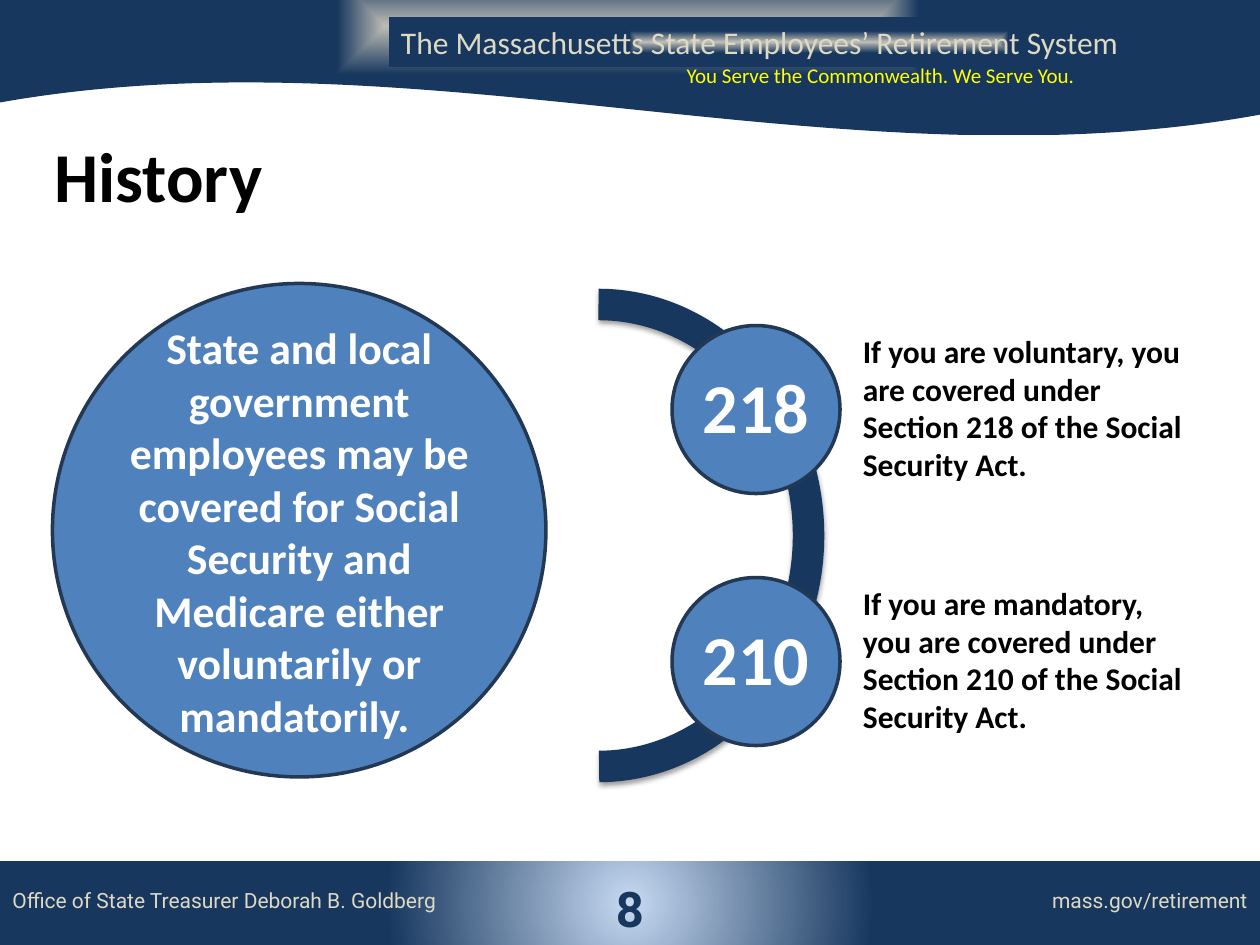
from dataclasses import dataclass

from pptx import Presentation
from pptx.dml.color import RGBColor
from pptx.enum.shapes import MSO_SHAPE
from pptx.enum.text import MSO_ANCHOR, MSO_AUTO_SIZE, PP_ALIGN
from pptx.oxml import parse_xml
from pptx.oxml.ns import nsdecls, qn
from pptx.util import Inches, Pt


@dataclass(frozen=True)
class Theme:
    """Colours, fonts and type sizes of the slide."""
    navy: str = "17375E"
    blue: str = "4F81BD"
    outline: str = "233953"
    ice: str = "C6D9F1"
    stone: str = "BEBDB5"
    sand: str = "DDD9C3"
    yellow: str = "FFFF00"
    white: str = "FFFFFF"
    black: str = "000000"
    body: str = "Calibri"
    footer: str = "Roboto"
    small: int = 12
    medium: int = 18
    statement: int = 25
    number: int = 28
    large: int = 40


class SlideBuilder:
    """Draws styled elements on one slide, placed on a 120 by 90 grid."""

    columns, rows = 120, 90

    def __init__(self, deck, theme):
        """Add a blank page to the deck."""
        self.deck, self.theme = deck, theme
        self.page = deck.slides.add_slide(deck.slide_layouts[6])

    def place(self, left, top, width, height):
        """Turn grid cells into slide lengths."""
        column = self.deck.slide_width / self.columns
        row = self.deck.slide_height / self.rows
        return [round(n) for n in (left * column, top * row, width * column, height * row)]

    def shape(self, kind, cells):
        """Add a preset shape with no shadow, fill or line."""
        shape = self.page.shapes.add_shape(kind, *self.place(*cells))
        shape.shadow.inherit = False
        shape.fill.background()
        shape.line.fill.background()
        return shape

    def band(self, kind, cells, centre, edge, stop, outline):
        """Add a shape whose gradient spreads from its centre."""
        shape = self.shape(kind, cells)
        properties = shape._element.spPr
        gradient = parse_xml(
            f'<a:gradFill {nsdecls("a")} rotWithShape="1"><a:gsLst>'
            f'<a:gs pos="0"><a:srgbClr val="{centre}"/></a:gs>'
            f'<a:gs pos="{stop * 1000}"><a:srgbClr val="{edge}"/></a:gs></a:gsLst>'
            f'<a:path path="{outline}"><a:fillToRect l="50000" t="50000" r="50000" b="50000"/>'
            '</a:path></a:gradFill>')
        properties.replace(properties.find(qn("a:noFill")), gradient)
        return shape

    def circle(self, cells):
        """Add an outlined blue circle."""
        shape = self.shape(MSO_SHAPE.OVAL, cells)
        shape.fill.solid()
        shape.fill.fore_color.rgb = RGBColor.from_string(self.theme.blue)
        self.stroke(shape, self.theme.outline, 2)

    def stroke(self, shape, color, width):
        """Give a shape a solid line."""
        shape.line.color.rgb = RGBColor.from_string(color)
        shape.line.width = Pt(width)

    def arc(self, cells):
        """Add the thick right-hand arc with its soft shadow."""
        shape = self.shape(MSO_SHAPE.ARC, cells)
        shape.adjustments[0], shape.adjustments[1] = 162, 53.91
        self.stroke(shape, self.theme.navy, 18)
        shape._element.spPr.find(qn("a:effectLst")).append(parse_xml(
            f'<a:outerShdw {nsdecls("a")} blurRad="{Pt(3.1)}" dist="{Pt(1.6)}" dir="5400000" '
            f'rotWithShape="0"><a:srgbClr val="{self.theme.black}"><a:alpha val="38000"/>'
            '</a:srgbClr></a:outerShdw>'))

    def text(self, cells, words, size, color, **style):
        """Add a wrapping text box."""
        box = self.page.shapes.add_textbox(*self.place(*cells))
        self.label(box, words, size, color, **style)

    def label(self, box, words, size, color, font=None, bold=False,
              align=PP_ALIGN.LEFT, anchor=MSO_ANCHOR.TOP, grow=True):
        """Fill a box with one styled paragraph."""
        frame = box.text_frame
        frame.text = words
        frame.word_wrap = True
        frame.vertical_anchor = anchor
        frame.auto_size = MSO_AUTO_SIZE.SHAPE_TO_FIT_TEXT if grow else MSO_AUTO_SIZE.NONE
        para = frame.paragraphs[0]
        para.alignment = align
        for span in para.runs:
            span.font.name = font or self.theme.body
            span.font.size = Pt(size)
            span.font.bold = bold
            span.font.color.rgb = RGBColor.from_string(color)


def draw_frame(slide, theme):
    """Draw the footer and the header."""
    slide.band(MSO_SHAPE.RECTANGLE, (-6.5, 82, 133, 8), theme.ice, theme.navy, 35, "circle")
    slide.text((0, 83.9, 46, 3.6), "Office of State Treasurer Deborah B. Goldberg",
               theme.small, theme.sand, font=theme.footer)
    slide.text((87, 83.9, 33, 3.6), "mass.gov/retirement",
               theme.small, theme.sand, font=theme.footer, align=PP_ALIGN.RIGHT)
    header = theme.stone, theme.navy, 44, "rect"
    slide.band(MSO_SHAPE.WAVE, (-3.2, -8, 126, 21), *header)
    banner = slide.band(MSO_SHAPE.RECTANGLE, (37, 1.6, 82, 4.8), *header)
    slide.label(banner, "The Massachusetts State Employees’ Retirement System",
                theme.medium, theme.sand)
    slide.text((64.2, 5.4, 92, 3.6), "You Serve the Commonwealth. We Serve You.",
               theme.small, theme.yellow)
    slide.text((54, 85.2, 12, 2.5), "8", theme.number, theme.navy, font=theme.footer,
               bold=True, align=PP_ALIGN.CENTER, anchor=MSO_ANCHOR.MIDDLE, grow=False)


def draw_history(slide, theme):
    """Draw the title, the statement and its two cases."""
    slide.circle((5, 27, 47, 47))
    slide.arc((37, 29, 40, 44))
    white_label = dict(color=theme.white, bold=True, align=PP_ALIGN.CENTER)
    slide.text((10, 30, 37, 41.6),
               "State and local government employees may be covered for Social Security "
               "and Medicare either voluntarily or mandatorily. ",
               theme.statement, **white_label)
    cases = [("218", "voluntary", 33.6), ("210", "mandatory", 33)]
    for index, (section, status, width) in enumerate(cases):
        top = 31 + 24 * index
        slide.circle((64, top, 16, 16))
        slide.text((64, top + 3, 16, 9.2), section, theme.large, **white_label)
        slide.text((81, top, width, 15.7),
                   f"If you are {status}, you are covered under Section {section} "
                   "of the Social Security Act.",
                   theme.medium, theme.black, bold=True)
    slide.text((4, 12, 98, 15), "History", theme.large, theme.black, bold=True, grow=False)


def main():
    """Build and save the deck."""
    deck = Presentation()
    deck.slide_width, deck.slide_height = Inches(10), Inches(7.5)
    theme = Theme()
    slide = SlideBuilder(deck, theme)
    draw_frame(slide, theme)
    draw_history(slide, theme)
    deck.save("out.pptx")


if __name__ == "__main__":
    main()
